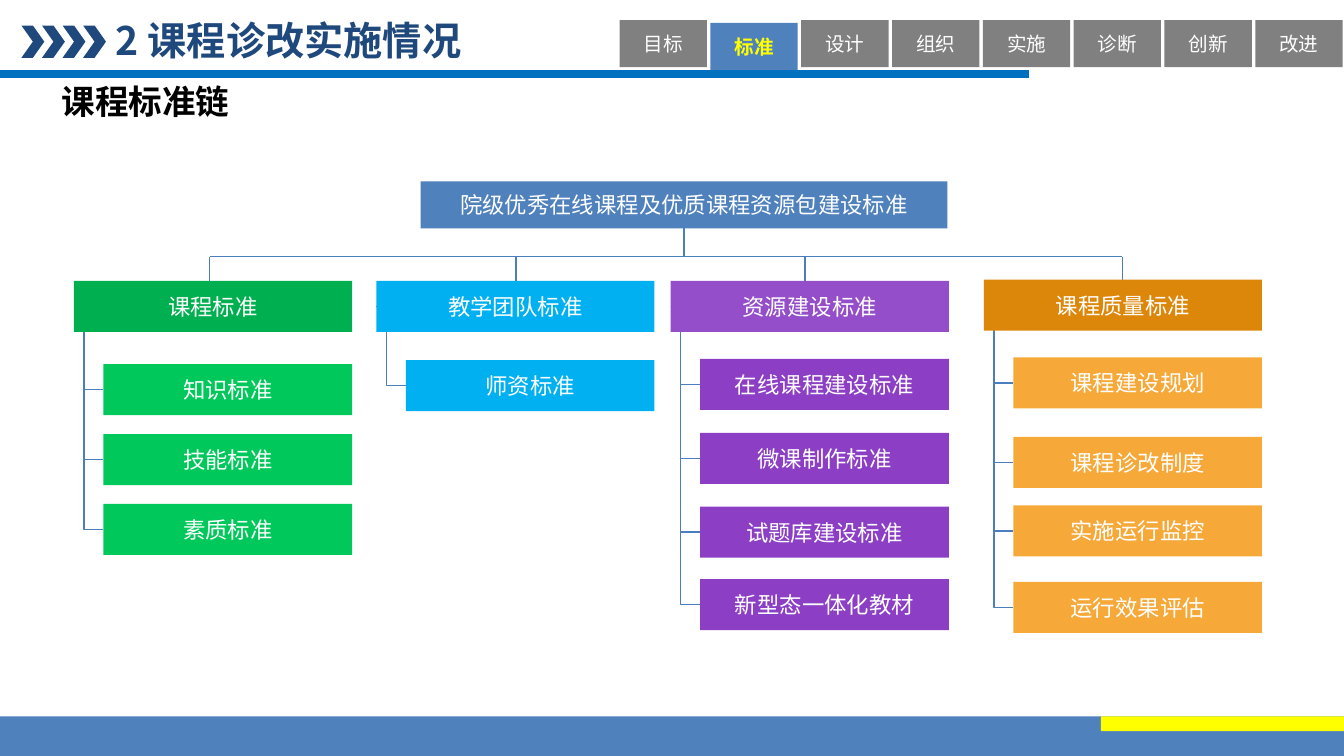
from lxml.etree import SubElement
from pptx import Presentation
from pptx.dml.color import RGBColor
from pptx.enum.shapes import MSO_CONNECTOR, MSO_SHAPE
from pptx.enum.text import MSO_ANCHOR, MSO_AUTO_SIZE, PP_ALIGN
from pptx.oxml.ns import qn
from pptx.util import Inches, Pt

COLORS = {
    "blue": "4F81BD", "navy": "1F497D", "rule": "0070C0", "link": "4B7EBC",
    "gray": "808080", "yellow": "FFFF00", "white": "FFFFFF", "black": "000000",
    "green": "00B050", "light_green": "00C85A", "cyan": "00B0F0",
    "violet": "954ECA", "purple": "8C3FC5",
    "orange": "DC870A", "light_orange": "F6A938",
}
CJK = "Noto Sans CJK SC"
COLS, ROWS = 100, 56.25  # square grid cells over the slide

prs = Presentation()
prs.slide_width, prs.slide_height = Inches(10), Inches(5.625)
slide = prs.slides.add_slide(prs.slide_layouts[5])


def col(n):
    return round(prs.slide_width * n / COLS)


def row(n):
    return round(prs.slide_height * n / ROWS)


def grid(box):
    x, y, w, h = box
    return col(x), row(y), col(w), row(h)


def rgb(name):
    return RGBColor.from_string(COLORS[name])


def write(sp, text, size, color, font=CJK, bold=False, align=PP_ALIGN.CENTER):
    tf = sp.text_frame
    tf.auto_size = MSO_AUTO_SIZE.NONE
    tf.vertical_anchor = MSO_ANCHOR.MIDDLE
    p = tf.paragraphs[0]
    p.alignment = align
    r = p.add_run()
    r.text = text
    r.font.name, r.font.size, r.font.bold = font, Pt(size), bold
    r.font.color.rgb = rgb(color)
    SubElement(r.font._element, qn("a:ea")).set("typeface", CJK)
    return tf


def block(box, fill, kind=MSO_SHAPE.RECTANGLE):
    sp = slide.shapes.add_shape(kind, *grid(box))
    sp.shadow.inherit = False
    sp.fill.solid()
    sp.fill.fore_color.rgb = rgb(fill)
    sp.line.fill.background()
    return sp


def link(x1, y1, x2, y2, bend=None, color="link", width=0.75):
    kind = MSO_CONNECTOR.STRAIGHT if bend is None else MSO_CONNECTOR.ELBOW
    c = slide.shapes.add_connector(kind, col(x1), row(y1), col(x2), row(y2))
    c.line.color.rgb = rgb(color)
    c.line.width = Pt(width)
    spPr = c._element.spPr
    SubElement(spPr, qn("a:effectLst"))
    if bend is not None:
        gd = SubElement(spPr.find(qn("a:prstGeom")).get_or_add_avLst(), qn("a:gd"))
        gd.set("name", "adj1")
        gd.set("fmla", f"val {round(bend * 100000)}")


def header(box):
    """Chevrons, title and the rule below them."""
    x, y, w, h = box
    for i in range(4):
        block((x + 1.6 + 1.53 * i, y + 1.9, 1.7, 2.4), "navy", MSO_SHAPE.CHEVRON)
    title = slide.shapes.title
    title.left, title.top, title.width, title.height = grid((x + 7.9, y + 1, 38, 4))
    tf = write(title, "2 课程诊改实施情况", 21, "navy", bold=True, align=PP_ALIGN.LEFT)
    tf.margin_left = tf.margin_right = Inches(0.07)
    tf.margin_top = tf.margin_bottom = Inches(0.04)
    link(x, y + h, x + w, y + h, color="rule", width=4)


def tabs(box, names, active):
    """Row of section tabs, the active one highlighted and lower."""
    x, y, w, h = box
    tab_w = 6.5
    pitch = (w - tab_w) / (len(names) - 1)
    for i, name in enumerate(names):
        on = name == active
        sp = block((x + pitch * i, y + 0.2 * on, tab_w, h), "blue" if on else "gray")
        write(sp, name, 10.5, "yellow" if on else "white", "Calibri", on)


def subtitle(box, text):
    sp = slide.shapes.add_textbox(*grid(box))
    tf = write(sp, text, 18, "black", bold=True, align=PP_ALIGN.LEFT)
    tf.word_wrap = False


def branch(box, name, fill, children, child_fill):
    """Heading box with indented children hung from an elbow link."""
    x, y, w, h = box
    indent = 2.2
    for child, top in children:
        link(x, y + h / 2, x + indent, top + h / 2, bend=0.34)
        write(block((x + indent, top, w - indent, h), child_fill), child, 12, "white")
    write(block(box, fill), name, 12, "white")


def tree(root_box, root, bar_y, branches):
    """Root box, horizontal bar with drops, and the branches."""
    x, y, w, h = root_box
    write(block(root_box, "blue"), root, 12, "white")
    link(x + w / 2, y + h, x + w / 2, bar_y)
    drops = [b[0] for b in branches]
    link(drops[0], bar_y, drops[-1], bar_y)
    for drop, box, *parts in branches:
        link(drop, bar_y, drop, box[1])
        branch(box, *parts)


def footer(box):
    x, y, w, h = box
    block(box, "blue")
    block((x + 0.819 * w, y, 0.181 * w, 1.1), "yellow")


header((0, 0, 76.6, 5.5))
tabs((46.1, 1.5, 53.8, 3.5),
     ["目标", "标准", "设计", "组织", "实施", "诊断", "创新", "改进"], "标准")
subtitle((3.6, 5.5, 15.5, 4), "课程标准链")

HEAD_W, HEAD_H = 20.7, 3.8
tree((31.3, 13.5, 39.2, 3.5), "院级优秀在线课程及优质课程资源包建设标准", 19.1, [
    (15.6, (5.5, 20.9, HEAD_W, HEAD_H), "课程标准", "green",
     [("知识标准", 27.1), ("技能标准", 32.3), ("素质标准", 37.5)], "light_green"),
    (38.4, (28, 20.9, HEAD_W, HEAD_H), "教学团队标准", "cyan",
     [("师资标准", 26.8)], "cyan"),
    (59.9, (49.9, 20.9, HEAD_W, HEAD_H), "资源建设标准", "violet",
     [("在线课程建设标准", 26.7), ("微课制作标准", 32.2),
      ("试题库建设标准", 37.7), ("新型态一体化教材", 43.1)], "purple"),
    (83.5, (73.2, 20.8, HEAD_W, HEAD_H), "课程质量标准", "orange",
     [("课程建设规划", 26.6), ("课程诊改制度", 32.5),
      ("实施运行监控", 37.6), ("运行效果评估", 43.3)], "light_orange"),
])
footer((0, 53.3, COLS, ROWS - 53.3))

prs.save("out.pptx")
